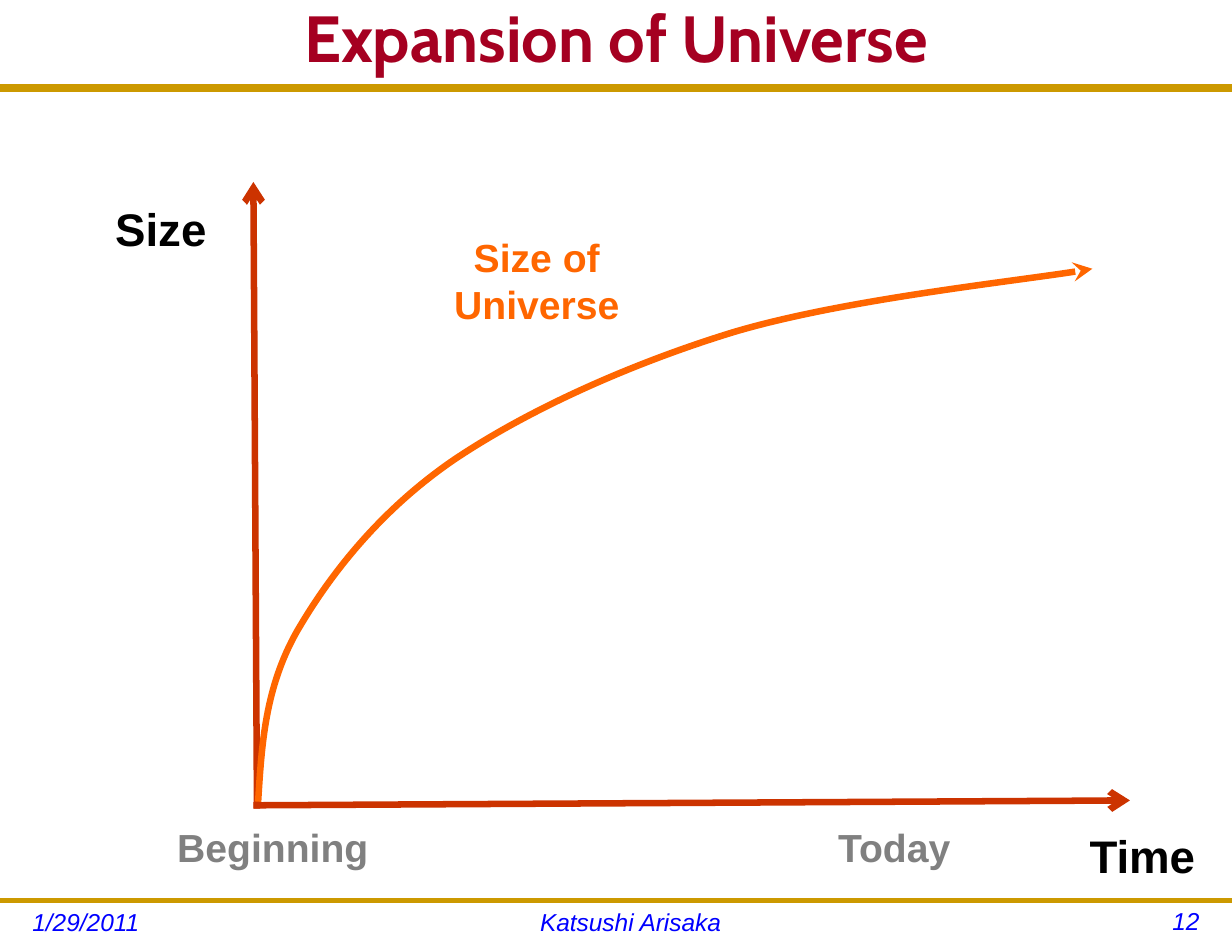
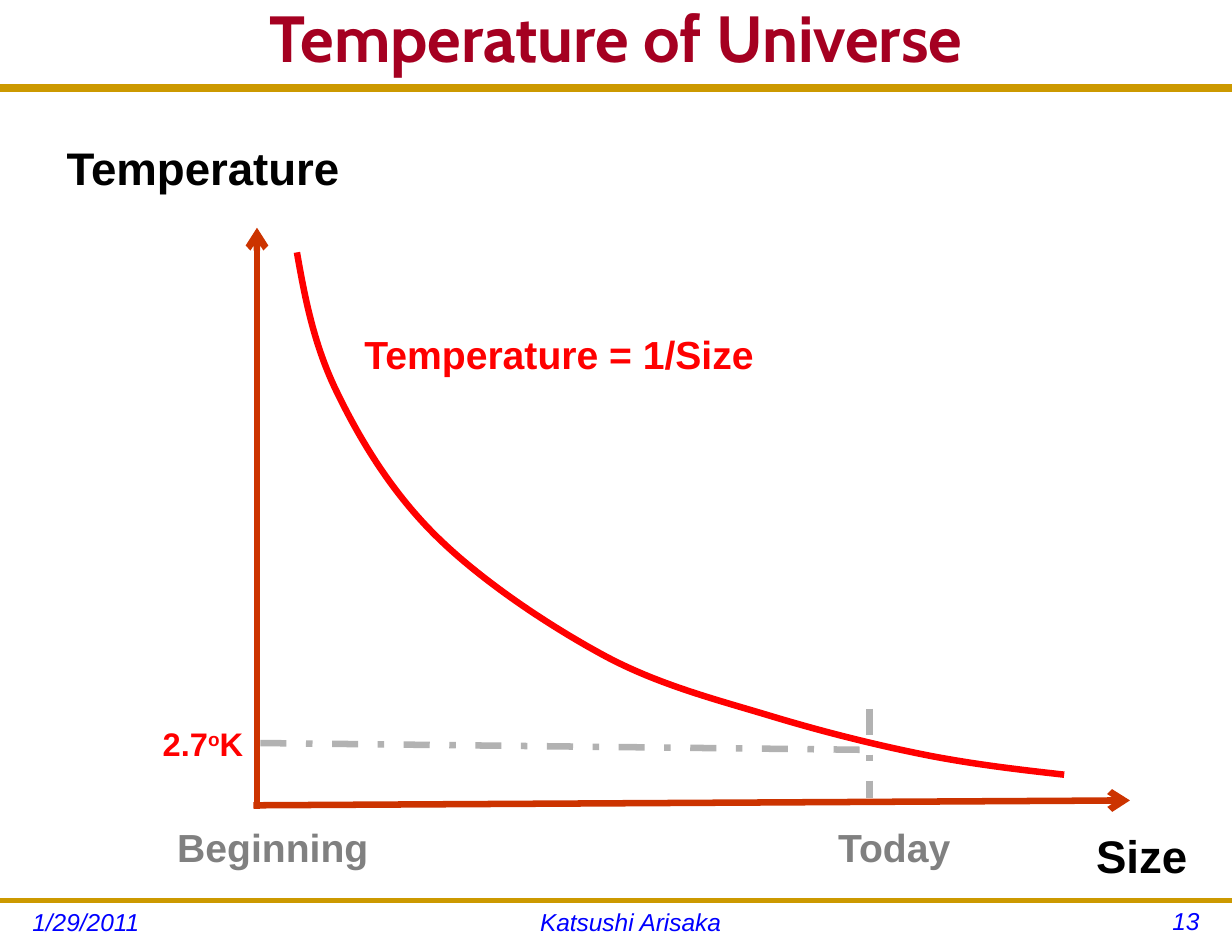
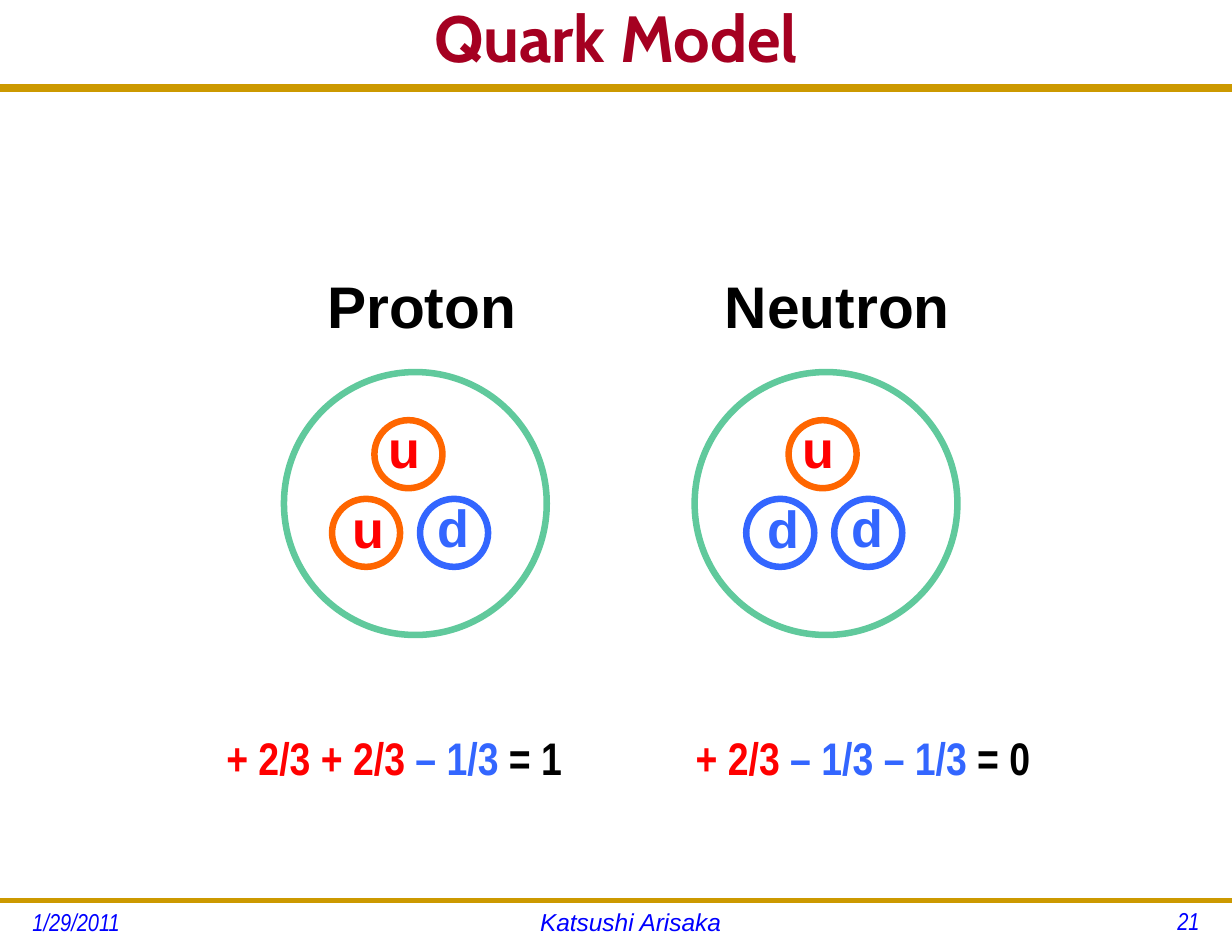
from dataclasses import dataclass
from typing import NamedTuple

from lxml import etree
from pptx import Presentation
from pptx import util as u
from pptx.dml.color import RGBColor
from pptx.enum import dml, shapes, text
from pptx.oxml.ns import qn
from pptx.slide import Slide

Pt = u.Pt
GOLD = RGBColor(0xCC, 0x99, 0x00)
CRIMSON = RGBColor(0xA5, 0x00, 0x21)
BLUE = RGBColor(0x00, 0x00, 0xFF)
BLACK = RGBColor(0x00, 0x00, 0x00)
GRAY = RGBColor(0x80, 0x80, 0x80)
SILVER = RGBColor(0xB2, 0xB2, 0xB2)
RUST = RGBColor(0xCC, 0x33, 0x00)
ORANGE = RGBColor(0xFF, 0x66, 0x00)
RED = RGBColor(0xFF, 0x00, 0x00)
SKY = RGBColor(0x33, 0x66, 0xFF)
GREEN = RGBColor(0x60, 0xC9, 0x9C)

SANS, NARROW, HEADING = "Arial", "Arial Narrow", "Cabin"
PAGE_WIDTH, PAGE_HEIGHT = 756, 576
STROKE = 4
LEFT, CENTER, RIGHT = text.PP_ALIGN.LEFT, text.PP_ALIGN.CENTER, text.PP_ALIGN.RIGHT
Point = tuple[float, float]


class Piece(NamedTuple):
    """A stretch of text in one colour."""

    words: str
    color: RGBColor
    baseline: int = 0


@dataclass(frozen=True)
class Label:
    """A text box with one paragraph."""

    pieces: tuple[Piece, ...]
    left: float
    top: float
    width: float
    height: float
    size: float
    font: str = SANS
    bold: bool = True
    italic: bool = False
    align: text.PP_ALIGN = CENTER
    wrap: bool = False
    frame: bool = False
    spacing: float | None = None


@dataclass(frozen=True)
class Rule:
    """A straight line, optionally dashed or with an arrowhead."""

    start: Point
    end: Point
    color: RGBColor
    width: float = STROKE
    head: str = ""
    tail: str = ""
    dashed: bool = False


@dataclass(frozen=True)
class Curve:
    """A chain of cubic Bezier segments."""

    points: tuple[Point, ...]
    color: RGBColor
    tail: str = ""


class Flavor(NamedTuple):
    """A quark's letter with its colours."""

    symbol: str
    ring: RGBColor
    ink: RGBColor


class Slot(NamedTuple):
    """A quark's place in a nucleon and the shift of its letter."""

    dx: float
    top: float
    letter_dx: float
    letter_dy: float


@dataclass(frozen=True)
class Nucleon:
    """Three quarks in a shell, with a name and a sum of charges."""

    name: str
    name_left: float
    name_width: float
    shell_left: float
    quarks_left: float
    quarks: tuple[Flavor, ...]
    charge_left: float
    charge: tuple[Piece, ...]


UP, DOWN = Flavor("u", ORANGE, RED), Flavor("d", SKY, SKY)
SLOTS = (
    Slot(26, 257.75, 1.45, -5.75),
    Slot(0, 306, 5.75, -5),
    Slot(54, 306, 3.6, -5.75),
)
NUCLEONS = (
    Nucleon("Proton", 193.7, 131.75, 174.25, 203.75, (UP, UP, DOWN), 131.75,
            (Piece("+ 2/3 + 2/3 ", RED), Piece("– 1/3 ", SKY), Piece("= 1", BLACK))),
    Nucleon("Neutron", 437.75, 154, 426.25, 457.9, (UP, DOWN, DOWN), 419.75,
            (Piece("+ 2/3 ", RED), Piece("– 1/3 – 1/3 ", SKY), Piece("= 0", BLACK))),
)
EXPANSION = Curve((
    (158.4, 491.8), (160.6, 456.5), (162.7, 421.9), (182.2, 387.4),
    (202.3, 352.8), (232.6, 313.9), (277.2, 283),
    (321.8, 252.7), (384.5, 223.9), (450, 203.8),
    (515.5, 184.3), (633.6, 171.4), (670.3, 164.9),
), ORANGE, "stealth")
COOLING = Curve((
    (182.2, 154.8), (187.2, 183.6), (193, 213.1), (207.4, 241.9),
    (221.8, 271.4), (241.2, 303.1), (268.6, 329.8),
    (295.9, 356.4), (335.5, 383), (370.1, 401.8),
    (404.6, 420.5), (442.1, 429.8), (475.2, 439.9),
    (509, 450), (541.4, 457.9), (571, 463.7),
    (601.2, 469.4), (627.1, 472.3), (653, 475.2),
), RED)


def add_label(slide: Slide, label: Label) -> None:
    """Draw a text box run by run."""
    box = slide.shapes.add_textbox(
        Pt(label.left), Pt(label.top), Pt(label.width), Pt(label.height))
    frame = box.text_frame
    frame.word_wrap = label.wrap
    if label.frame:
        frame.margin_left = frame.margin_right = Pt(7.92)
        frame.auto_size = text.MSO_AUTO_SIZE.NONE
    else:
        frame.auto_size = text.MSO_AUTO_SIZE.SHAPE_TO_FIT_TEXT
    paragraph = frame.paragraphs[0]
    paragraph.alignment = label.align
    if label.spacing:
        paragraph.line_spacing = label.spacing
        frame.vertical_anchor = text.MSO_ANCHOR.MIDDLE
    for piece in label.pieces:
        run = paragraph.add_run()
        run.text = piece.words
        run.font.name = label.font
        run.font.size = Pt(label.size)
        run.font.bold = label.bold
        run.font.italic = label.italic
        run.font.color.rgb = piece.color
        if piece.baseline:
            run._r.get_or_add_rPr().set("baseline", str(piece.baseline * 1000))


def style_line(line, color: RGBColor, width: float = STROKE,
               head: str = "", tail: str = "") -> None:
    """Set colour, width and arrowheads of a line."""
    line.color.rgb = color
    line.width = Pt(width)
    for tag, kind in (("a:headEnd", head), ("a:tailEnd", tail)):
        if kind:
            etree.SubElement(line._get_or_add_ln(), qn(tag), type=kind)


def add_rule(slide: Slide, rule: Rule) -> None:
    """Draw a straight line."""
    connector = slide.shapes.add_connector(
        shapes.MSO_CONNECTOR.STRAIGHT, *map(Pt, rule.start + rule.end))
    if rule.dashed:
        connector.line.dash_style = dml.MSO_LINE.DASH_DOT
    style_line(connector.line, rule.color, rule.width, rule.head, rule.tail)
    etree.SubElement(connector._element.spPr, qn("a:effectLst"))


def add_curve(slide: Slide, curve: Curve) -> None:
    """Draw a freeform and bend each three of its segments into one cubic."""
    start, *rest = [(Pt(x), Pt(y)) for x, y in curve.points]
    builder = slide.shapes.build_freeform(*start)
    builder.add_line_segments(rest, close=False)
    outline = builder.convert_to_shape()
    outline.fill.background()
    outline.shadow.inherit = False
    style_line(outline.line, curve.color, tail=curve.tail)
    steps = list(outline._element.iter(qn("a:lnTo")))
    for first in range(0, len(steps), 3):
        cubic = etree.Element(qn("a:cubicBezTo"))
        steps[first].addprevious(cubic)
        for step in steps[first:first + 3]:
            cubic.append(step[0])
            step.getparent().remove(step)


def add_ring(slide: Slide, left: float, top: float, size: float, color: RGBColor) -> None:
    """Draw an unfilled circle."""
    ring = slide.shapes.add_shape(
        shapes.MSO_SHAPE.OVAL, Pt(left), Pt(top), Pt(size), Pt(size))
    ring.fill.background()
    ring.shadow.inherit = False
    style_line(ring.line, color)


def add_nucleon(slide: Slide, nucleon: Nucleon) -> None:
    """Draw a nucleon with its name, quarks and charge."""
    add_label(slide, Label((Piece(nucleon.name, BLACK),), nucleon.name_left, 162,
                           nucleon.name_width, 51, 36, align=LEFT))
    add_ring(slide, nucleon.shell_left, 228.25, 161.25, GREEN)
    for flavor, slot in zip(nucleon.quarks, SLOTS):
        left = nucleon.quarks_left + slot.dx
        add_ring(slide, left, slot.top, 41.75, flavor.ring)
        add_label(slide, Label((Piece(flavor.symbol, flavor.ink),),
                               left + slot.letter_dx, slot.top + slot.letter_dy,
                               34.5, 46, 32, align=LEFT))
    add_label(slide, Label(nucleon.charge, nucleon.charge_left, 444.25,
                           222.5, 41, 28, NARROW, align=LEFT))


def add_page(deck, title: str, number: str, footer_font: str = SANS) -> Slide:
    """Add a slide with the shared rules, footer and title."""
    slide = deck.slides.add_slide(deck.slide_layouts[6])
    for y, width in ((54, 4.5), (552.25, 3)):
        add_rule(slide, Rule((0, y), (PAGE_WIDTH, y), GOLD, width))
    for words, left, width, align, font in (
        ("1/29/2011", 12, 150, LEFT, footer_font),
        ("Katsushi Arisaka", 168, 438, CENTER, SANS),
        (number, 612, 132, RIGHT, footer_font),
    ):
        top = 552.25 if align == RIGHT else 553
        add_label(slide, Label((Piece(words, BLUE),), left, top, width, 23, 15, font,
                               bold=False, italic=True, align=align, wrap=True, frame=True))
    add_label(slide, Label((Piece(title, CRIMSON),), 12, 0, 732, 54, 40, HEADING,
                           wrap=True, frame=True, spacing=0.8))
    return slide


def add_axes(slide: Slide, tip: Point, across: Label, upward: Label) -> None:
    """Draw both axes with their names and the two moments in time."""
    add_rule(slide, Rule((155.5, 494), (693.4, 491), RUST, tail="arrow"))
    add_rule(slide, Rule(tip, (157.7, 496), RUST, head="arrow"))
    add_label(slide, across)
    add_label(slide, upward)
    for moment, left, width in (("Today", 506.2, 85), ("Beginning", 101.5, 131.8)):
        add_label(slide, Label((Piece(moment, GRAY),), left, 501.8, width, 36, 24))


def axis_name(words: str, left: float, top: float, width: float) -> Label:
    """Return the name of an axis."""
    return Label((Piece(words, BLACK),), left, top, width, 41, 28)


def main() -> None:
    """Build and save the slides."""
    deck = Presentation()
    deck.slide_width, deck.slide_height = Pt(PAGE_WIDTH), Pt(PAGE_HEIGHT)

    expansion = add_page(deck, "Expansion of Universe", "12")
    add_axes(expansion, (155.5, 111.6),
             axis_name("Time", 661, 504, 80), axis_name("Size", 63.4, 119.5, 70.5))
    add_curve(expansion, EXPANSION)
    add_label(expansion, Label((Piece("Size of Universe", ORANGE),),
                               253.4, 139.7, 152, 65, 24, wrap=True))

    temperature = add_page(deck, "Temperature of Universe", "13")
    add_axes(temperature, (157.7, 139.7),
             axis_name("Size", 665.3, 504, 70.5), axis_name("Temperature", 32.4, 82, 184.3))
    add_curve(temperature, COOLING)
    add_label(temperature, Label((Piece("Temperature = 1/Size", RED),),
                                 215.3, 199.4, 255.6, 36, 24, wrap=True))
    add_label(temperature, Label((Piece("2.7", RED), Piece("o", RED, 30), Piece("K", RED)),
                                 92.2, 440.6, 64.8, 31, 20, wrap=True))
    for start, end in (((159.8, 455.8), (532.8, 460)), ((533.5, 434.9), (533.5, 489.6))):
        add_rule(temperature, Rule(start, end, SILVER, dashed=True))

    quarks = add_page(deck, "Quark Model", "21", NARROW)
    for nucleon in NUCLEONS:
        add_nucleon(quarks, nucleon)

    deck.save("out.pptx")


if __name__ == "__main__":
    main()
